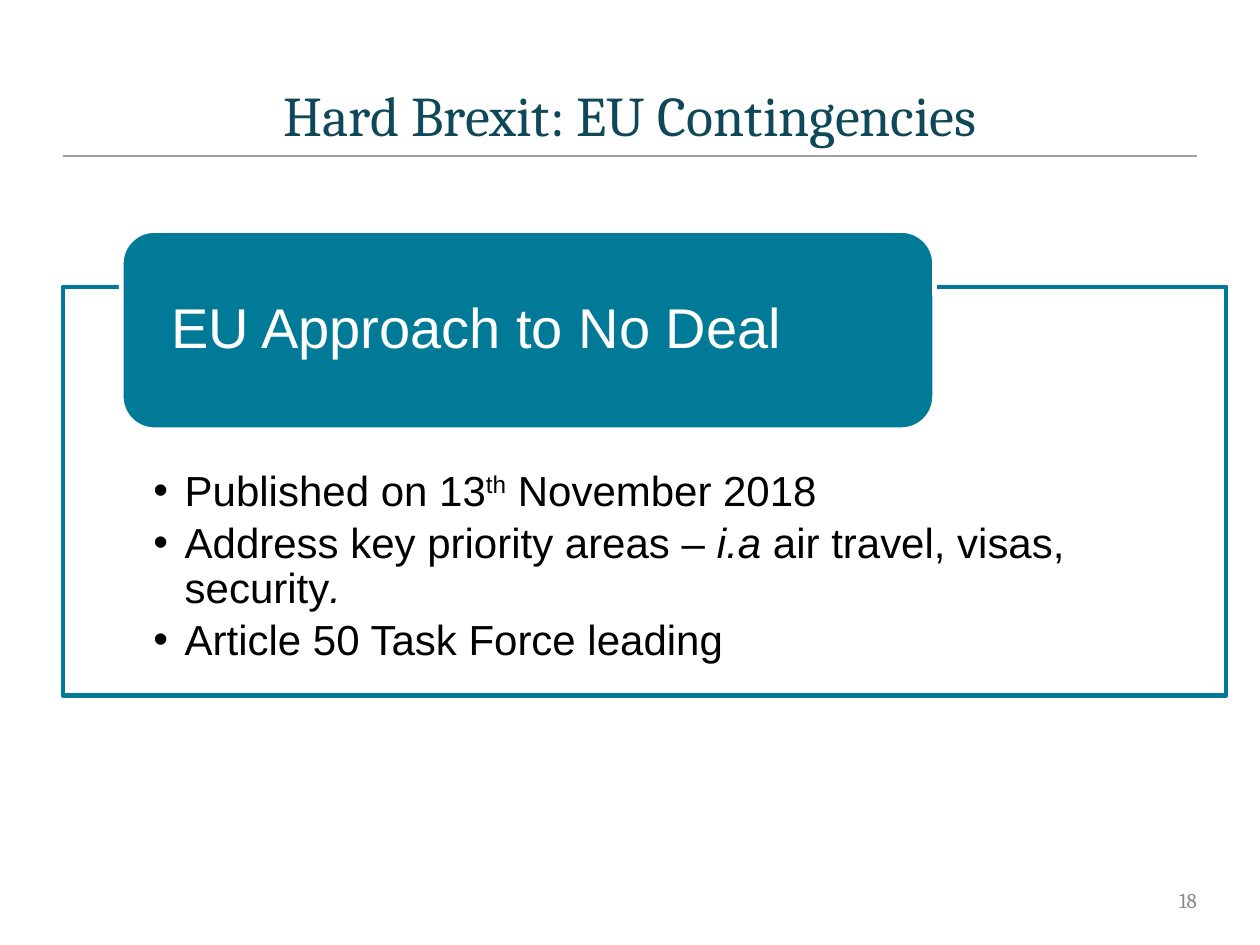
"""Build the slide on the EU contingencies for a hard Brexit."""
import pptx
import pptx.dml.color
import pptx.enum.shapes
import pptx.enum.text
import pptx.oxml
import pptx.oxml.ns
import pptx.util

Pt = pptx.util.Pt
RGBColor = pptx.dml.color.RGBColor
Shape = pptx.enum.shapes.MSO_SHAPE
Align = pptx.enum.text.PP_ALIGN
Anchor = pptx.enum.text.MSO_ANCHOR

TEAL = RGBColor(0x00, 0x7A, 0x96)
NAVY = RGBColor(0x0F, 0x48, 0x59)
RULE_GRAY = RGBColor(0xA0, 0xA0, 0xA0)
NUMBER_GRAY = RGBColor(0x8C, 0x8C, 0x8C)
WHITE = RGBColor(0xFF, 0xFF, 0xFF)
BLACK = RGBColor(0x00, 0x00, 0x00)
MARGIN = 27
RIGHT = 513


def element(markup):
    return pptx.oxml.parse_xml(markup.replace("/>", f" {pptx.oxml.ns.nsdecls('a')}/>"))


def write(para, spans, size, color, font="Arial", align=Align.LEFT, spacing=1, after=0, indent=0):
    if indent:
        properties = para._p.get_or_add_pPr()
        properties.set("marL", str(Pt(indent)))
        properties.set("indent", str(-Pt(indent)))
        properties.append(element('<a:buFont typeface="Arial"/>'))
        properties.append(element('<a:buChar char="•"/>'))
    para.alignment, para.line_spacing = align, spacing
    para.space_before, para.space_after = Pt(0), Pt(after)
    for text, style in spans:
        span = para.add_run()
        span.text = text
        span.font.name, span.font.size = font, Pt(size)
        span.font.color.rgb = color
        span.font.italic = style == "italic"
        if style == "superscript":
            span._r.get_or_add_rPr().set("baseline", "30000")


class Page:
    def __init__(self, deck):
        self.slide = deck.slides.add_slide(deck.slide_layouts[5])
        self.shapes = self.slide.shapes

    def frame(self, box, anchor, insets):
        frame = box.text_frame
        frame.word_wrap = True
        frame.auto_size = pptx.enum.text.MSO_AUTO_SIZE.NONE
        frame.vertical_anchor = anchor
        (frame.margin_left, frame.margin_top,
         frame.margin_right, frame.margin_bottom) = map(Pt, insets)
        return frame

    def title(self, text, place):
        box = self.shapes.title
        box.left, box.top, box.width, box.height = map(Pt, place)
        frame = self.frame(box, Anchor.BOTTOM, (7.2, 3.6, 7.2, 3.6))
        write(frame.paragraphs[0], [(text, "")], 24, NAVY, "Cambria", Align.CENTER)

    def rule(self, top):
        line = self.shapes.add_connector(
            pptx.enum.shapes.MSO_CONNECTOR.STRAIGHT, Pt(MARGIN), Pt(top), Pt(RIGHT), Pt(top))
        line.line.color.rgb, line.line.width = RULE_GRAY, Pt(1)
        line._element.spPr.append(element("<a:effectLst/>"))

    def number(self, text, place):
        box = self.shapes.add_textbox(*map(Pt, place))
        frame = self.frame(box, Anchor.MIDDLE, (7.2, 3.6, 0, 3.6))
        write(frame.paragraphs[0], [(text, "")], 9, NUMBER_GRAY, "Cambria", Align.RIGHT)

    def block(self, kind, place, fill, line):
        box = self.shapes.add_shape(kind, *map(Pt, place))
        box.shadow.inherit = False
        box.fill.solid()
        box.fill.fore_color.rgb = fill
        box.line.color.rgb, box.line.width = line, Pt(2)
        return box

    def panel(self, bullets, place):
        box = self.block(Shape.RECTANGLE, place, WHITE, TEAL)
        color = box._element.spPr.find(".//" + pptx.oxml.ns.qn("a:srgbClr"))
        color.append(element('<a:alpha val="90000"/>'))
        frame = self.frame(box, Anchor.TOP, (38.7, 78.5, 38.7, 10))
        for position, spans in enumerate(bullets):
            para = frame.add_paragraph() if position else frame.paragraphs[0]
            write(para, spans, 18, BLACK, spacing=0.9, after=2.7, indent=13.5)

    def heading(self, text, place):
        box = self.block(Shape.ROUNDED_RECTANGLE, place, TEAL, WHITE)
        frame = self.frame(box, Anchor.MIDDLE, (17.2, 4, 17.2, 4))
        write(frame.paragraphs[0], [(text, "")], 24, WHITE, spacing=0.9)


def main():
    deck = pptx.Presentation()
    deck.slide_width, deck.slide_height = Pt(540), Pt(405)
    page = Page(deck)
    page.title("Hard Brexit: EU Contingencies", (MARGIN, 31, RIGHT - MARGIN, 36))
    page.rule(67)
    page.number("18", (391.5, 375, 121.5, 21.6))
    page.panel([
        [("Published on 13", ""), ("th", "superscript"), (" November 2018", "")],
        [("Address key priority areas – ", ""), ("i.a ", "italic"),
         ("air travel, visas, security", ""), (".", "italic")],
        [("Article 50 Task Force leading", "")],
    ], (MARGIN, 123, 498.5, 175))
    page.heading("EU Approach to No Deal", (52, 98.8, 348.6, 85.4))
    deck.save("out.pptx")


if __name__ == "__main__":
    main()
